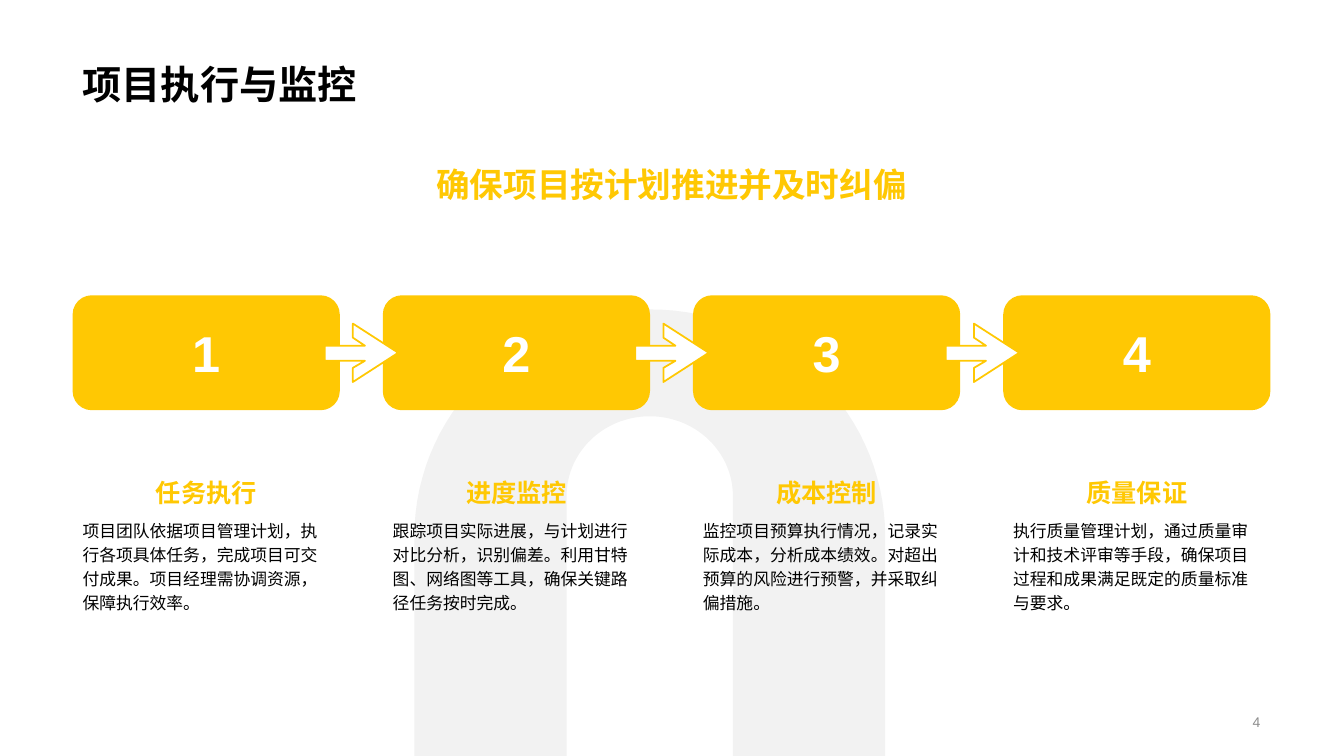
import math
from pptx import Presentation
from pptx import util as u
from pptx.dml.color import RGBColor
from pptx.enum import shapes, text
from pptx.oxml import ns
from lxml import etree

COLORS = {"yellow": "FFC803", "black": "000000", "white": "FFFFFF",
          "arch": "808080", "number": "8C8C8C"}
CHINESE = "Noto Sans CJK SC"
LEFT, WIDTH = 0.72, 11.88
CARD_WIDTH = 2.65
PITCH = (WIDTH - CARD_WIDTH) / 3

STEPS = [
    ("任务执行", "项目团队依据项目管理计划，执行各项具体任务，完成项目可交付成果。项目经理需协调资源，保障执行效率。"),
    ("进度监控", "跟踪项目实际进展，与计划进行对比分析，识别偏差。利用甘特图、网络图等工具，确保关键路径任务按时完成。"),
    ("成本控制", "监控项目预算执行情况，记录实际成本，分析成本绩效。对超出预算的风险进行预警，并采取纠偏措施。"),
    ("质量保证", "执行质量管理计划，通过质量审计和技术评审等手段，确保项目过程和成果满足既定的质量标准与要求。"),
]

presentation = Presentation()
presentation.slide_width, presentation.slide_height = u.Inches(13.33), u.Inches(7.5)
slide = presentation.slides.add_slide(presentation.slide_layouts[5])


def write(shape, words, size, color, align="LEFT", anchor="MIDDLE",
          bold=True, font=CHINESE, wrap=True, spacing=1.0):
    frame = shape.text_frame
    frame.text = words
    frame.auto_size = text.MSO_AUTO_SIZE.NONE
    frame.word_wrap = wrap
    frame.vertical_anchor = getattr(text.MSO_ANCHOR, anchor)
    paragraph = frame.paragraphs[0]
    paragraph.alignment = getattr(text.PP_ALIGN, align)
    paragraph.line_spacing = spacing
    run = paragraph.runs[0]
    for name, value in {"size": u.Pt(size), "bold": bold, "name": font}.items():
        setattr(run.font, name, value)
    run.font.color.rgb = RGBColor.from_string(COLORS[color])
    east_asian = etree.SubElement(run.font._element, ns.qn("a:ea"))
    east_asian.set("typeface", font)


def outline(points, fill):
    # Freeform points are whole numbers, so inches become thousandths
    units = [(round(x * 1000), round(y * 1000)) for x, y in points]
    builder = slide.shapes.build_freeform(*units[0], scale=u.Inches(1) / 1000)
    builder.add_line_segments(units[1:], close=True)
    shape = builder.convert_to_shape()
    shape.shadow.inherit = False
    shape.fill.solid()
    shape.fill.fore_color.rgb = RGBColor.from_string(COLORS[fill])
    return shape


# Title
title = slide.shapes.title
for side, value in {"left": LEFT, "top": 0.14, "width": WIDTH, "height": 0.98}.items():
    setattr(title, side, u.Inches(value))
write(title, "项目执行与监控", 28, "black", anchor="BOTTOM")

# Pale arch: outer curve left to right, inner curve back
arch_points = [(4.11, 7.5)]
for radius_x, radius_y, center_y, start, step in [(2.335, 2.25, 5.32, 180, -3),
                                                  (0.825, 0.79, 4.92, 0, 3)]:
    angles = [math.radians(start + step * i) for i in range(61)]
    arc = [(6.445 + radius_x * math.cos(a), center_y - radius_y * math.sin(a)) for a in angles]
    arch_points += [*arc, (arc[-1][0], 7.5)]
    if start == 180:
        arch_points.append((7.27, 7.5))
arch = outline(arch_points, "arch")
arch.line.fill.background()
alpha = etree.SubElement(arch.fill._xPr.find(".//" + ns.qn("a:srgbClr")), ns.qn("a:alpha"))
alpha.set("val", "10000")

# Headline and slide number
headline = slide.shapes.add_textbox(*map(u.Inches, (LEFT, 1.24, WIDTH, 1.18)))
write(headline, "确保项目按计划推进并及时纠偏", 24, "yellow", "CENTER")
number = slide.shapes.add_textbox(*map(u.Inches, (8.6, 7.01, 4, 0.3)))
write(number, "4", 10, "number", "RIGHT", bold=False, font="Arial")

# Four steps: card, heading, description
for index, (heading, description) in enumerate(STEPS):
    left = LEFT + index * PITCH
    card = slide.shapes.add_shape(shapes.MSO_SHAPE.ROUNDED_RECTANGLE,
                                  *map(u.Inches, (left, 2.93, CARD_WIDTH, 1.14)))
    card.shadow.inherit = False
    card.fill.solid()
    card.fill.fore_color.rgb = RGBColor.from_string(COLORS["yellow"])
    card.line.fill.background()
    write(card, str(index + 1), 36, "white", "CENTER", font="Arial", wrap=False)
    box = slide.shapes.add_textbox(*map(u.Inches, (left, 4.19, CARD_WIDTH, 0.89)))
    write(box, heading, 18, "yellow", "CENTER", "BOTTOM")
    box = slide.shapes.add_textbox(*map(u.Inches, (left, 5.08, CARD_WIDTH, 1.62)))
    write(box, description, 12, "black", anchor="TOP", bold=False, spacing=u.Pt(17.1))

# Arrows across the gaps between cards
ARROW = [(0, 0.22), (0.4, 0.22), (0.28, 0.14), (0.28, 0), (0.73, 0.29),
         (0.28, 0.58), (0.28, 0.44), (0.4, 0.37), (0, 0.37)]
for index in range(len(STEPS) - 1):
    arrow = outline([(3.22 + index * 3.08 + x, 3.21 + y) for x, y in ARROW], "white")
    arrow.line.color.rgb = RGBColor.from_string(COLORS["yellow"])
    arrow.line.width = u.Pt(1.25)

presentation.save("out.pptx")
